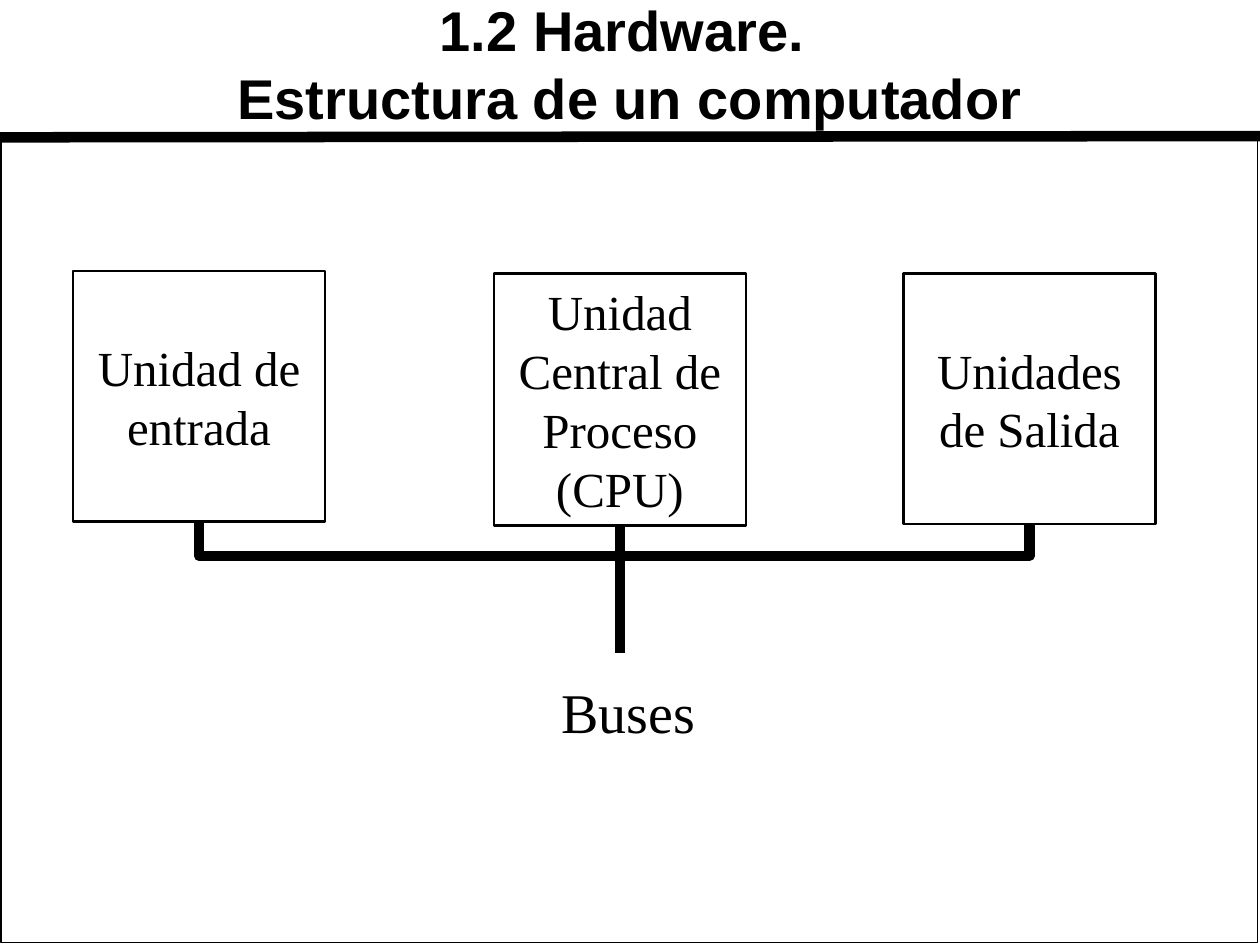
"""Build the slide on the hardware structure of a computer."""
from dataclasses import dataclass

from lxml import etree
from pptx import Presentation
from pptx.dml.color import RGBColor
from pptx.enum.shapes import MSO_CONNECTOR, MSO_SHAPE
from pptx.enum.text import MSO_ANCHOR, MSO_AUTO_SIZE, PP_ALIGN
from pptx.oxml.ns import qn
from pptx.shapes.autoshape import Shape
from pptx.shapes.connector import Connector
from pptx.slide import Slide
from pptx.text.text import TextFrame
from pptx.util import Inches, Pt

STRAIGHT, ELBOW = MSO_CONNECTOR.STRAIGHT, MSO_CONNECTOR.ELBOW
RECTANGLE = MSO_SHAPE.RECTANGLE
MIDDLE, TOP = MSO_ANCHOR.MIDDLE, MSO_ANCHOR.TOP
CENTER, LEFT = PP_ALIGN.CENTER, PP_ALIGN.LEFT
NO_AUTOFIT = MSO_AUTO_SIZE.NONE
TITLE_ONLY = 5


@dataclass(frozen=True)
class Theme:
    ink: RGBColor = RGBColor(0, 0, 0)
    paper: RGBColor = RGBColor(255, 255, 255)
    title_font: str = "Arial"
    body_font: str = "Times New Roman"
    title_size: int = 32
    unit_size: int = 28
    label_size: int = 32
    bus_width: float = 6
    unit_width: float = 1.5
    frame_width: float = 1


@dataclass(frozen=True)
class Unit:
    name: str
    left: float
    top: float
    height: float
    inset: float = 0.1


THEME = Theme()
UNIT_WIDTH = 2
UNITS = (
    Unit("Unidad de entrada", 0.58, 2.15, 1.99),
    Unit("Unidad Central de Proceso (CPU)", 3.92, 2.17, 2, 0.02),
    Unit("Unidades de Salida", 7.17, 2.17, 1.99),
)


def write(frame: TextFrame, text: str, font: str, size: int,
          align: PP_ALIGN, anchor: MSO_ANCHOR, bold: bool = False) -> None:
    """Set the text of a frame and format its runs."""
    frame.text = text
    frame.auto_size = NO_AUTOFIT
    frame.vertical_anchor = anchor
    for paragraph in frame.paragraphs:
        paragraph.alignment = align
        for run in paragraph.runs:
            run.font.name = font
            run.font.size = Pt(size)
            run.font.bold = bold
            run.font.color.rgb = THEME.ink


def add_box(slide: Slide, left: float, top: float, width: float,
            height: float, line_width: float) -> Shape:
    """Add an outlined rectangle."""
    box = slide.shapes.add_shape(
        RECTANGLE, Inches(left), Inches(top), Inches(width), Inches(height))
    box.shadow.inherit = False
    box.fill.solid()
    box.fill.fore_color.rgb = THEME.paper
    box.line.color.rgb = THEME.ink
    box.line.width = Pt(line_width)
    return box


def add_unit(slide: Slide, unit: Unit) -> None:
    """Add one unit of the computer with its name."""
    box = add_box(slide, unit.left, unit.top, UNIT_WIDTH, unit.height,
                  THEME.unit_width)
    frame = box.text_frame
    frame.word_wrap = True
    frame.margin_left = frame.margin_right = Inches(unit.inset)
    frame.margin_top = frame.margin_bottom = Inches(unit.inset / 2)
    write(frame, unit.name, THEME.body_font, THEME.unit_size, CENTER, MIDDLE)


def add_line(slide: Slide, start: tuple[float, float],
             end: tuple[float, float],
             kind: MSO_CONNECTOR = STRAIGHT) -> Connector:
    """Add a thick line between two points."""
    line = slide.shapes.add_connector(
        kind, *(Inches(length) for length in (*start, *end)))
    line.line.color.rgb = THEME.ink
    line.line.width = Pt(THEME.bus_width)
    etree.SubElement(line._element.spPr, qn("a:effectLst"))
    return line


def add_bus(slide: Slide, start: tuple[float, float],
            end: tuple[float, float], drop: float) -> None:
    """Add an elbow line that drops below its start before reaching its end."""
    center_x, center_y = (start[0] + end[0]) / 2, (start[1] + end[1]) / 2
    span, rise = end[0] - start[0], end[1] - start[1]
    bus = add_line(slide,
                   (center_x + rise / 2, center_y - span / 2),
                   (center_x - rise / 2, center_y + span / 2), ELBOW)
    properties = bus._element.spPr
    properties.find(qn("a:xfrm")).set("rot", str(270 * 60000))
    adjustments = properties.find(qn("a:prstGeom")).find(qn("a:avLst"))
    etree.SubElement(adjustments, qn("a:gd"), name="adj1",
                     fmla=f"val {round(drop / rise * 100000)}")


def main() -> None:
    """Build and save the slide."""
    presentation = Presentation()
    presentation.slide_width, presentation.slide_height = Inches(10), Inches(7.5)
    slide = presentation.slides.add_slide(presentation.slide_layouts[TITLE_ONLY])

    title = slide.shapes.title
    title.left, title.top = Inches(0.25), Inches(0)
    title.width, title.height = Inches(9.5), Inches(1)
    write(title.text_frame, "1.2 Hardware. \vEstructura de un computador",
          THEME.title_font, THEME.title_size, CENTER, MIDDLE, bold=True)

    add_line(slide, (0, 1.09), (10.02, 1.08))
    frame = add_box(slide, 0.01, 1.08, 9.97, 6.4, THEME.frame_width)
    frame.fill.background()

    for unit in UNITS:
        add_unit(slide, unit)
    add_bus(slide, (1.58, 4.15), (8.17, 4.17), 0.26)
    add_line(slide, (4.92, 4.18), (4.92, 5.18))

    label = slide.shapes.add_textbox(
        Inches(4.36), Inches(5.33), Inches(1.27), Inches(0.63))
    label.text_frame.word_wrap = False
    write(label.text_frame, "Buses", THEME.body_font, THEME.label_size, LEFT, TOP)

    presentation.save("out.pptx")


if __name__ == "__main__":
    main()
